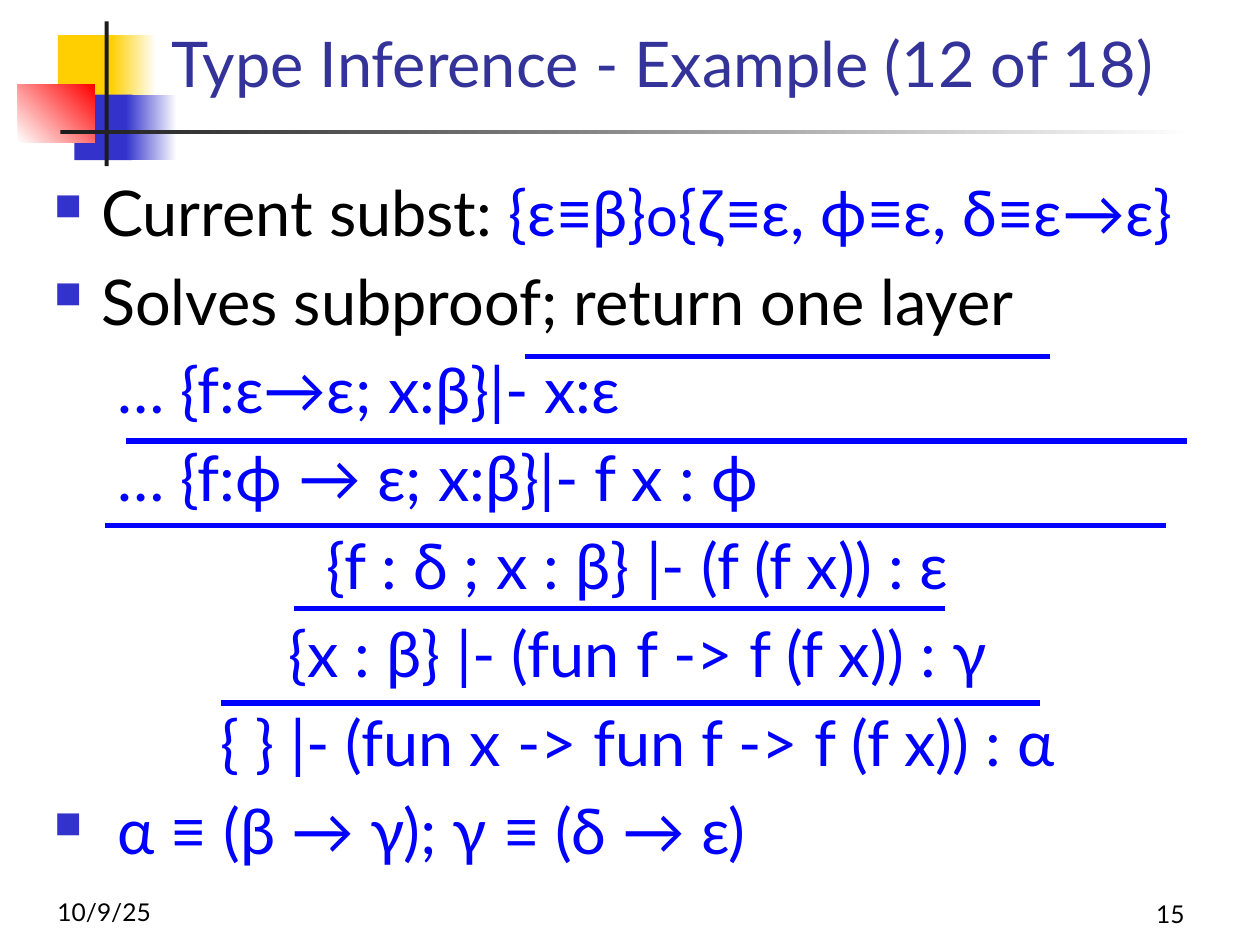
from lxml import etree
from pptx import Presentation
from pptx.dml.color import RGBColor
from pptx.enum.shapes import MSO_CONNECTOR, MSO_SHAPE
from pptx.enum.text import MSO_ANCHOR, PP_ALIGN
from pptx.oxml.ns import qn
from pptx.util import Cm, Pt

RECT = MSO_SHAPE.RECTANGLE
STRAIGHT = MSO_CONNECTOR.STRAIGHT
TOP, BOTTOM = MSO_ANCHOR.TOP, MSO_ANCHOR.BOTTOM
LEFT, CENTER, RIGHT = PP_ALIGN.LEFT, PP_ALIGN.CENTER, PP_ALIGN.RIGHT

BLACK = RGBColor(0x00, 0x00, 0x00)
WHITE = RGBColor(0xFF, 0xFF, 0xFF)
DARK = RGBColor(0x1C, 0x1C, 0x1C)
GOLD = RGBColor(0xFF, 0xCF, 0x01)
RED = RGBColor(0xFF, 0x00, 0x00)
INDIGO = RGBColor(0x33, 0x33, 0xCC)
NAVY = RGBColor(0x33, 0x33, 0x99)
BLUE = RGBColor(0x00, 0x00, 0xFF)

FONT = "Lato"
HANG = Cm(0.95)

# left, top, width, height, colours (two make a gradient), angle
DECOR = [
    (1.17, 0.71, 1.22, 1.32, [GOLD], 0),
    (2.24, 0.71, 0.91, 1.32, [GOLD, WHITE], 0),
    (1.5, 1.91, 1.17, 1.32, [INDIGO], 0),
    (2.54, 1.91, 1.02, 1.32, [INDIGO, WHITE], 0),
    (0.36, 1.7, 1.55, 1.17, [WHITE, RED], 45),
    (2.11, 0.43, 0.08, 2.92, [DARK], 0),
    (1.22, 2.62, 22.86, 0.08, [DARK, WHITE], 0),
]

# left, right, height on the slide of each inference bar
BARS = [
    (10.58, 21.16, 7.19),
    (2.54, 23.93, 8.89),
    (2.11, 23.5, 10.59),
    (5.92, 19.05, 12.27),
    (4.45, 20.96, 14.17),
]

SUBST = [
    ("Current subst: ", {"color": BLACK}),
    ("{ε≡β}", {}),
    ("o", {"size": 32}),
    ("{", {}),
    ("ζ", {"font": "Arial"}),
    ("≡ε, ϕ≡ε, δ≡ε→ε}", {}),
]

# rows whose parts stand at tab stops
SPLIT = [
    ("\t…\t{f:ε→ε; x:β}|- x:ε", (3.5, 8.35)),
    ("\t…\t{f:ϕ → ε; x:β}|- f x : ϕ", (4.73, 6.98)),
]

PROOF = [
    "{f : δ ; x : β} |- (f (f x)) : ε",
    "{x : β} |- (fun f -> f (f x)) : γ",
    "{ } |- (fun x -> fun f -> f (f x)) : α",
]


def write(para, text, size=36, font=FONT, color=BLUE, align=LEFT):
    run = para.add_run()
    run.text = text
    run.font.size = Pt(size)
    run.font.name = font
    run.font.color.rgb = color
    para.alignment = align


def add_box(slide, left, top, width, height, anchor=BOTTOM):
    box = slide.shapes.add_textbox(Cm(left), Cm(top), Cm(width), Cm(height))
    frame = box.text_frame
    frame.word_wrap = True
    frame.vertical_anchor = anchor
    return frame


def add_block(slide, left, top, width, height, colors, angle):
    block = slide.shapes.add_shape(RECT, Cm(left), Cm(top), Cm(width), Cm(height))
    block.shadow.inherit = False
    block.line.fill.background()
    if len(colors) == 1:
        block.fill.solid()
        block.fill.fore_color.rgb = colors[0]
        return
    block.fill.gradient()
    block.fill.gradient_angle = angle
    for stop, color in zip(block.fill.gradient_stops, colors):
        stop.color.rgb = color


def add_bar(slide, left, right, top):
    bar = slide.shapes.add_connector(STRAIGHT, Cm(left), Cm(top), Cm(right), Cm(top))
    bar.line.color.rgb = BLUE
    bar.line.width = Pt(3)
    etree.SubElement(bar._element.spPr, qn("a:effectLst"))


def add_node(parent, tag, **attrs):
    node = etree.SubElement(parent, qn(tag))
    for name, value in attrs.items():
        node.set(name, str(value))
    return node


def add_row(frame, bullet=False, stops=()):
    """Return a new paragraph, hanging unless it has tab stops."""
    first = frame.paragraphs[0]
    para = frame.add_paragraph() if first.runs else first
    para.space_before = Pt(7.2)
    props = para._p.get_or_add_pPr()
    hang = 0 if stops else HANG
    props.set("marL", str(hang))
    props.set("indent", str(-hang))
    if bullet:
        color = add_node(props, "a:buClr")
        add_node(color, "a:srgbClr", val=INDIGO)
        add_node(props, "a:buSzPct", val=60000)
        add_node(props, "a:buChar", char="■")
    else:
        add_node(props, "a:buNone")
    if stops:
        tabs = add_node(props, "a:tabLst")
        for stop in stops:
            add_node(tabs, "a:tab", pos=Cm(stop), algn="l")
    return para


def add_body(slide):
    frame = add_box(slide, 0.84, 3.38, 24.03, 13.64, anchor=TOP)
    para = add_row(frame, bullet=True)
    for text, style in SUBST:
        write(para, text, **style)
    write(add_row(frame, bullet=True), "Solves subproof; return one layer", color=BLACK)
    for text, stops in SPLIT:
        write(add_row(frame, stops=stops), text)
    for text in PROOF:
        write(add_row(frame), text, align=CENTER)
    write(add_row(frame, bullet=True), " α ≡ (β → γ); γ ≡ (δ → ε)")


def add_label(slide, place, text, **style):
    write(add_box(slide, *place).paragraphs[0], text, **style)


def main():
    deck = Presentation()
    deck.slide_width, deck.slide_height = Cm(25.4), Cm(19.05)
    slide = deck.slides.add_slide(deck.slide_layouts[6])
    for block in DECOR:
        add_block(slide, *block)
    add_label(slide, (0.91, 17.53, 5.28, 1.27), "10/9/25", size=14, color=BLACK)
    add_label(slide, (18.85, 17.58, 5.28, 1.27), "15", size=14, color=BLACK, align=RIGHT)
    add_label(slide, (3.2, 0.46, 21.64, 1.68), "Type Inference - Example (12 of 18)", color=NAVY)
    add_body(slide)
    for bar in BARS:
        add_bar(slide, *bar)
    deck.save("out.pptx")


if __name__ == "__main__":
    main()
